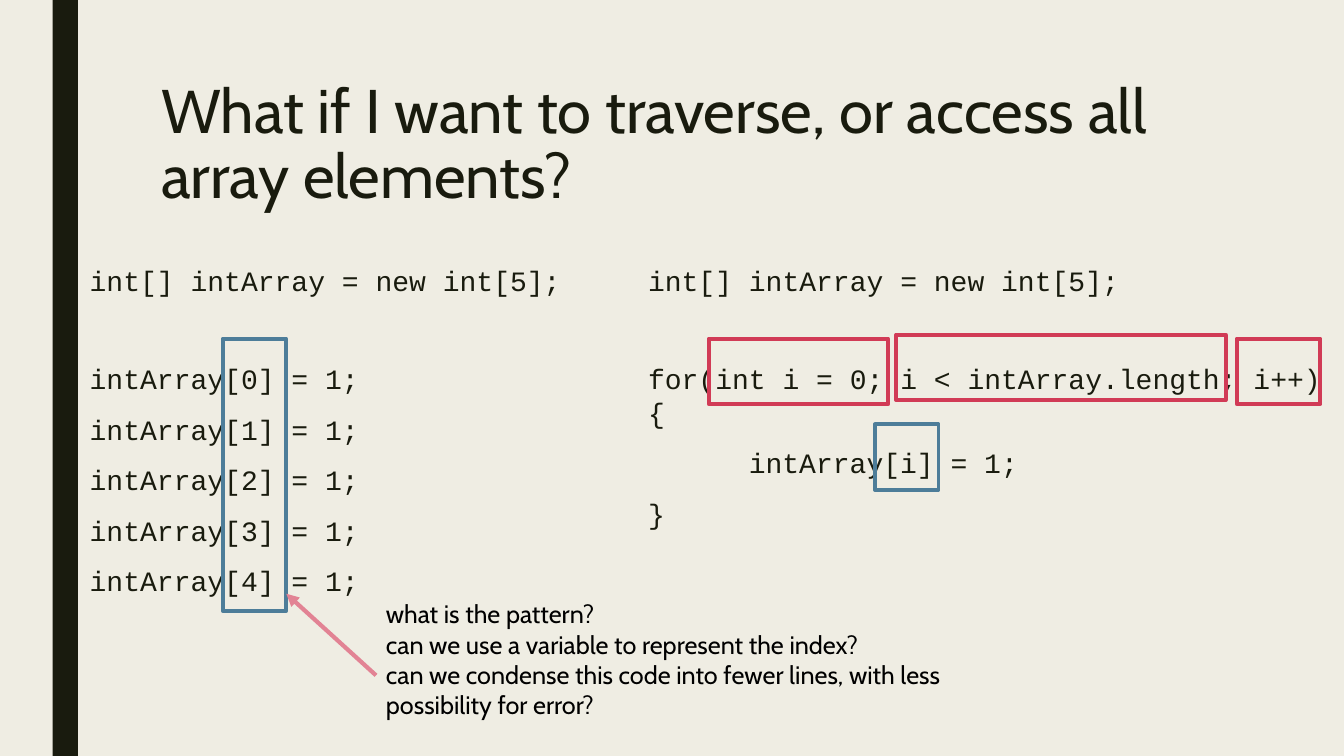
from lxml import etree
from pptx import Presentation
from pptx.dml.color import RGBColor
from pptx.enum.dml import MSO_LINE
from pptx.enum.shapes import MSO_CONNECTOR, MSO_SHAPE
from pptx.enum.text import MSO_ANCHOR, PP_ALIGN
from pptx.oxml.ns import qn
from pptx.util import Pt

RECTANGLE = MSO_SHAPE.RECTANGLE
STRAIGHT = MSO_CONNECTOR.STRAIGHT
SOLID = MSO_LINE.SOLID
TOP = MSO_ANCHOR.TOP
LEFT = PP_ALIGN.LEFT

COLORS = {
    "paper": "EFEDE3",
    "ink": "191B0E",
    "black": "000000",
    "blue": "4D7D99",
    "red": "D13B56",
    "pink": "E28394",
}
SANS = "Cabin"
MONO = "Courier New"
CODE_SIZE = 20
CODE_GAP = 10
SECTION_GAP = 44.6
TAB_WIDTH = 72
INDEX_WIDTH = 45.4
FRAME_HEIGHT = 46.8

DECLARATION = "int[] intArray = new int[5];"
ASSIGNMENTS = [f"intArray[{index}] = 1;" for index in range(5)]
LOOP = ["for(int i = 0; i < intArray.length; i++) {", "\tintArray[i] = 1;", "}"]
QUESTIONS = [
    "what is the pattern?",
    "can we use a variable to represent the index?",
    "can we condense this code into fewer lines, with less possibility for error?",
]


def color(name):
    return RGBColor.from_string(COLORS[name])


def add_text(page, box, lines, *, font, size, ink, spacing=1.0, before=(), after=0):
    shape = page.shapes.add_textbox(*map(Pt, box))
    frame = shape.text_frame
    frame.word_wrap = True
    frame.vertical_anchor = TOP
    for number, line in enumerate(lines):
        para = frame.paragraphs[0] if number == 0 else frame.add_paragraph()
        para.alignment = LEFT
        para.line_spacing = spacing
        para.space_before = Pt(before[number] if before else 0)
        para.space_after = Pt(after)
        if line.startswith("\t"):
            stops = etree.SubElement(para._p.get_or_add_pPr(), qn("a:tabLst"))
            etree.SubElement(stops, qn("a:tab"), pos=str(Pt(TAB_WIDTH)), algn="l")
        span = para.add_run()
        span.text = line
        span.font.name = font
        span.font.size = Pt(size)
        span.font.color.rgb = color(ink)


def add_sidebar(page, box):
    bar = page.shapes.add_shape(RECTANGLE, *map(Pt, box))
    bar.shadow.inherit = False
    bar.fill.solid()
    bar.fill.fore_color.rgb = color("ink")
    bar.line.fill.background()


def add_title(page, box):
    title = "What if I want to traverse, or access all array elements?"
    add_text(page, box, [title], font=SANS, size=44, ink="ink", spacing=0.89)


def add_frame(page, box, name):
    frame = page.shapes.add_shape(RECTANGLE, *map(Pt, box))
    frame.shadow.inherit = False
    frame.fill.background()
    frame.line.color.rgb = color(name)
    frame.line.width = Pt(2.75)


def add_code(page, box, statements, frames):
    left, top = box[:2]
    before = [0, SECTION_GAP] + [CODE_GAP] * (len(statements) - 1)
    add_text(page, box, [DECLARATION] + statements, font=MONO, size=CODE_SIZE,
             ink="ink", before=before, after=2)
    for name, across, down, width, height in frames:
        add_frame(page, (left + across, top + down, width, height), name)


def add_questions(page, box, tip):
    left, top, width, height = box
    arrow = page.shapes.add_connector(
        STRAIGHT, Pt(left), Pt(top + height / 2), Pt(tip), Pt(top))
    arrow.line.color.rgb = color("pink")
    arrow.line.width = Pt(3)
    arrow.line.dash_style = SOLID
    etree.SubElement(arrow.line._get_or_add_ln(), qn("a:tailEnd"), type="triangle")
    etree.SubElement(arrow._element.spPr, qn("a:effectLst"))
    add_text(page, box, QUESTIONS, font=SANS, size=18, ink="black")


def build_traversal_slide(deck):
    page = deck.slides.add_slide(deck.slide_layouts[6])
    page.background.fill.solid()
    page.background.fill.fore_color.rgb = color("paper")
    add_sidebar(page, (37.6, 0, 18, 540))
    add_title(page, (108, 54, 756, 116.6))

    code_top, code_height = 184.3, 282.2
    list_left, index_across = 57, 102.1
    add_code(page, (list_left, code_top, 413.3, code_height), ASSIGNMENTS,
             [("blue", index_across, 57.6, INDEX_WIDTH, 194.4)])
    add_questions(page, (268.6, 424.1, 445, 116.6),
                  list_left + index_across + INDEX_WIDTH)
    add_code(page, (455.8, code_top, 496.8, code_height), LOOP, [
        ("blue", 169.2, 118.8, INDEX_WIDTH, FRAME_HEIGHT),
        ("red", 427.6, 57.6, 59.8, FRAME_HEIGHT),
        ("red", 50.4, 57.6, 128.2, FRAME_HEIGHT),
        ("red", 184.3, 54.7, 235.4, FRAME_HEIGHT),
    ])


def main():
    deck = Presentation()
    deck.slide_width, deck.slide_height = Pt(960), Pt(540)
    build_traversal_slide(deck)
    deck.save("out.pptx")


if __name__ == "__main__":
    main()
